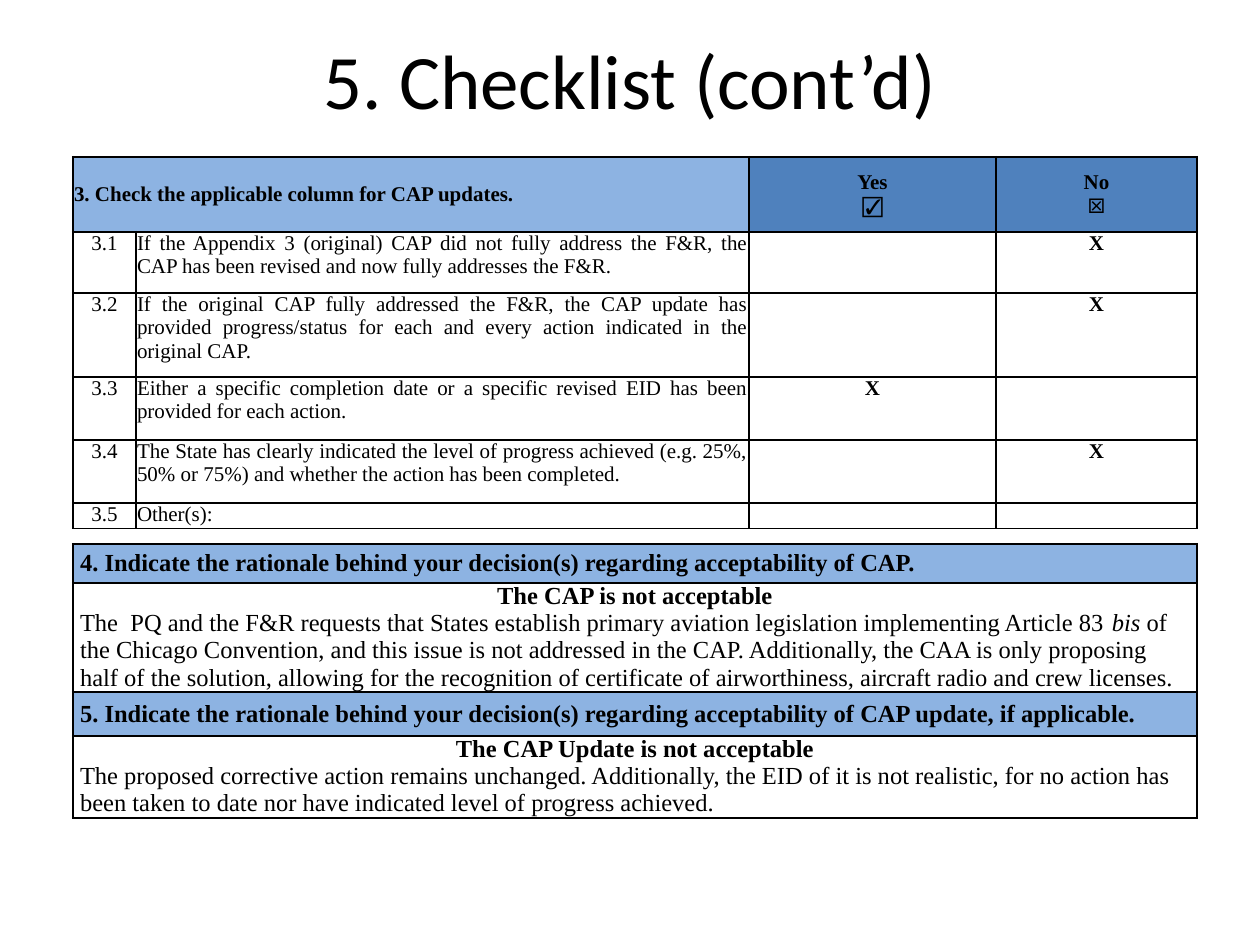
import pptx
import pptx.util
import pptx.enum.text
import pptx.dml.color
import pptx.oxml.ns
import lxml.etree

EMU_PER_PX = 914400 / 126
COLORS = {"black": "000000", "light": "8DB3E2", "blue": "4F81BD"}
ALIGN = pptx.enum.text.PP_ALIGN
ANCHOR = pptx.enum.text.MSO_ANCHOR
SERIF = "Times New Roman"

CHECKS = [
    ("3.1", "If the Appendix 3 (original) CAP did not fully address the F&R, the CAP has been "
            "revised and now fully addresses the F&R.", "", "X"),
    ("3.2", "If the original CAP fully addressed the F&R, the CAP update has provided "
            "progress/status for each and every action indicated in the original CAP.", "", "X"),
    ("3.3", "Either a specific completion date or a specific revised EID has been provided "
            "for each action.", "X", ""),
    ("3.4", "The State has clearly indicated the level of progress achieved (e.g. 25%, 50% or "
            "75%) and whether the action has been completed.", "", "X"),
    ("3.5", "Other(s):", "", ""),
]

# Each section: heading, heading alignment, verdict, rationale as (text, italic) spans
SECTIONS = [
    ("4. Indicate the rationale behind your decision(s) regarding acceptability of CAP.",
     ALIGN.LEFT, "The CAP is not acceptable",
     [("The  PQ and the F&R requests that States establish primary aviation legislation "
       "implementing Article 83 ", False),
      ("bis ", True),
      ("of the Chicago Convention, and this issue is not addressed in the CAP. Additionally, "
       "the CAA is only proposing half of the solution, allowing for the recognition of "
       "certificate of airworthiness, aircraft radio and crew licenses.", False)]),
    ("5. Indicate the rationale behind your decision(s) regarding acceptability of CAP update, "
     "if applicable.",
     ALIGN.JUSTIFY, "The CAP Update is not acceptable",
     [("The proposed corrective action remains unchanged. Additionally, the EID of it is not "
       "realistic, for no action has been taken to date nor have indicated level of progress "
       "achieved.", False)]),
]


def px(length):
    return pptx.util.Emu(round(length * EMU_PER_PX))


def rgb(name):
    return pptx.dml.color.RGBColor.from_string(COLORS[name])


def style_span(span, size, bold=False, italic=False, font=SERIF):
    span.font.name = font
    span.font.size = pptx.util.Pt(size)
    span.font.bold = bold
    span.font.italic = italic
    span.font.color.rgb = rgb("black")


def fill_para(para, spans, size, align, bold=False):
    para.alignment = align
    for text, italic in spans:
        span = para.add_run()
        span.text = text
        style_span(span, size, bold, italic)


def write_cell(cell, text, size, align, bold=False):
    """Write one paragraph for each line of text."""
    frame = cell.text_frame
    frame.text = text
    for para in frame.paragraphs:
        para.alignment = align
        for span in para.runs:
            style_span(span, size, bold)
        if not para.runs:
            # An empty cell needs a text size too, so that its row stays low
            end = lxml.etree.SubElement(para._p, pptx.oxml.ns.qn("a:endParaRPr"))
            end.set("sz", str(size * 100))


def set_border(cell, side, points):
    line = lxml.etree.SubElement(cell._tc.get_or_add_tcPr(), pptx.oxml.ns.qn("a:ln" + side))
    line.set("w", str(pptx.util.Pt(points)))
    fill = lxml.etree.SubElement(line, pptx.oxml.ns.qn("a:solidFill"))
    lxml.etree.SubElement(fill, pptx.oxml.ns.qn("a:srgbClr")).set("val", COLORS["black"])


def format_cell(cell, widths, inset, fill=None, anchor=ANCHOR.TOP):
    """Widths are the border points for left, right, top and bottom."""
    for side, points in zip("LRTB", widths):
        set_border(cell, side, points)
    cell.margin_left = cell.margin_right = px(inset)
    cell.margin_top = cell.margin_bottom = 0
    cell.vertical_anchor = anchor
    if fill:
        cell.fill.solid()
        cell.fill.fore_color.rgb = rgb(fill)
    else:
        cell.fill.background()


def add_grid(page, left, top, columns, rows):
    frame = page.shapes.add_table(len(rows), len(columns), px(left), px(top),
                                  px(sum(columns)), px(sum(rows)))
    table = frame.table
    table.first_row = table.horz_banding = False
    for column, width in zip(table.columns, columns):
        column.width = px(width)
    for row, height in zip(table.rows, rows):
        row.height = px(height)
    return table


def add_title(page, text):
    title = page.shapes.title
    title.left, title.top, title.width, title.height = px(63), px(0), px(1134), px(158)
    title.text_frame.text = text
    title.text_frame.vertical_anchor = ANCHOR.MIDDLE
    para = title.text_frame.paragraphs[0]
    para.alignment = ALIGN.CENTER
    style_span(para.runs[0], 44, font="Calibri")


def add_checklist(page):
    columns = [63, 613, 247, 201]
    table = add_grid(page, 73, 157, columns, [75, 61, 84, 63, 63, 24])
    last = len(columns) - 1

    # Borders: heavy at the sides and around the header, light inside
    for row in range(len(table.rows)):
        for column in range(len(columns)):
            header = row == 0
            widths = (1.5 if column == 0 else 1, 1.5 if column == last else 1,
                      1.5 if row < 2 else 1, 1.5 if header else 1)
            fill = ("light" if column < 2 else "blue") if header else None
            format_cell(table.cell(row, column), widths, 1, fill,
                        ANCHOR.MIDDLE if header else ANCHOR.TOP)

    # Header
    table.cell(0, 0).merge(table.cell(0, 1))
    write_cell(table.cell(0, 0), "3. Check the applicable column for CAP updates.",
               12, ALIGN.LEFT, True)
    write_cell(table.cell(0, 2), "Yes\n☑", 12, ALIGN.CENTER, True)
    write_cell(table.cell(0, 3), "No\n☒", 12, ALIGN.CENTER, True)

    # Checks
    for row, check in enumerate(CHECKS, 1):
        for column, text in enumerate(check):
            align = ALIGN.JUSTIFY if column == 1 else ALIGN.CENTER
            write_cell(table.cell(row, column), text, 12, align, column > 1)


def add_rationale(page):
    table = add_grid(page, 73, 544, [1124], [39, 109, 44, 82])
    borders = (1.5,) * 4
    for index, (heading, align, verdict, rationale) in enumerate(SECTIONS):
        head, body = table.cell(2 * index, 0), table.cell(2 * index + 1, 0)
        format_cell(head, borders, 7, "light", ANCHOR.MIDDLE)
        write_cell(head, heading, 14, align, True)
        format_cell(body, borders, 7)
        write_cell(body, verdict, 14, ALIGN.CENTER, True)
        fill_para(body.text_frame.add_paragraph(), rationale, 14, ALIGN.LEFT)


def main():
    deck = pptx.Presentation()
    deck.slide_width, deck.slide_height = px(1260), px(945)
    page = deck.slides.add_slide(deck.slide_layouts[5])
    add_title(page, "5. Checklist (cont’d)")
    add_rationale(page)
    add_checklist(page)
    deck.save("out.pptx")


if __name__ == "__main__":
    main()
